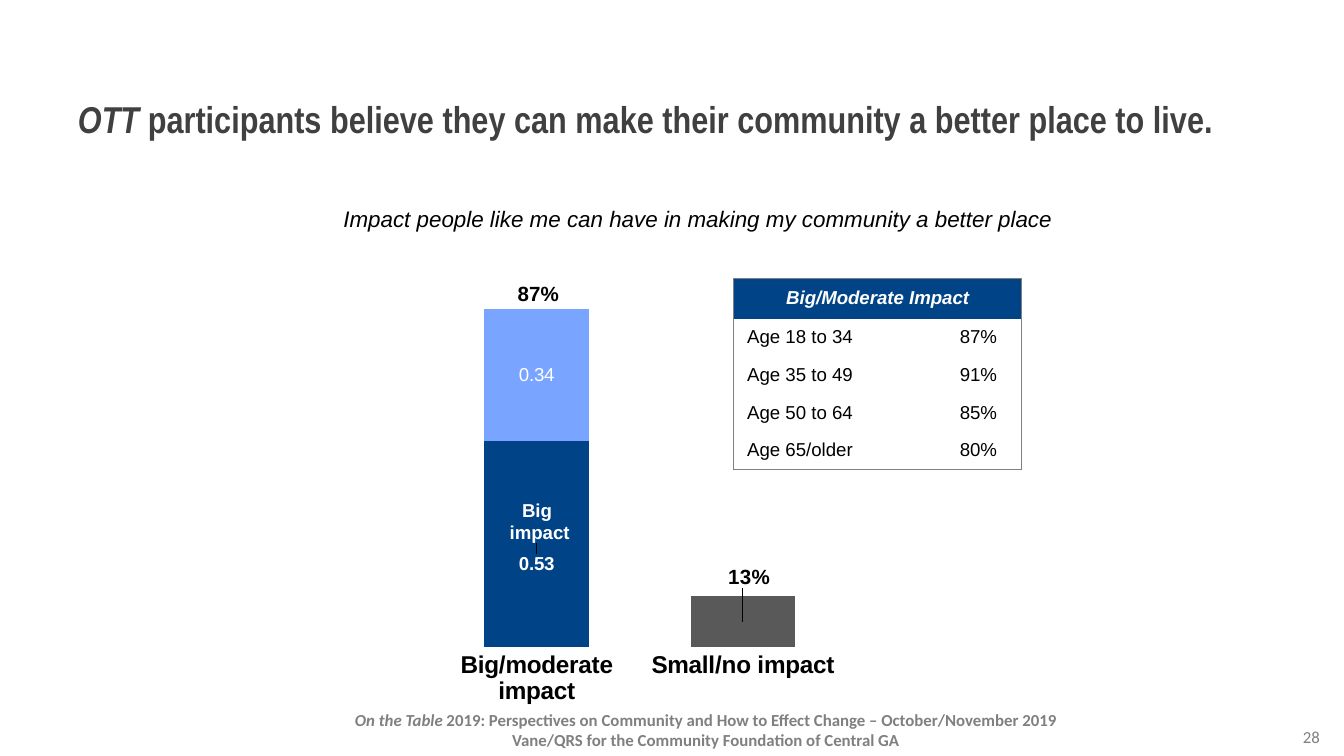
from lxml import etree
from pptx import Presentation
from pptx.chart.data import CategoryChartData
from pptx.dml.color import RGBColor
from pptx.enum.chart import XL_CHART_TYPE, XL_TICK_LABEL_POSITION, XL_TICK_MARK
from pptx.enum.text import MSO_ANCHOR, PP_ALIGN
from pptx.oxml import parse_xml
from pptx.oxml.ns import nsdecls, qn
from pptx.util import Inches, Pt

BLACK = RGBColor(0, 0, 0)
WHITE = RGBColor(255, 255, 255)
NAVY = RGBColor(0x00, 0x43, 0x86)
SKY = RGBColor(0x79, 0xA4, 0xFF)
CHARCOAL = RGBColor(0x59, 0x59, 0x59)
TITLE_GRAY = RGBColor(0x40, 0x40, 0x40)
GRAY = RGBColor(0x80, 0x80, 0x80)

LEFT, CENTER, RIGHT = PP_ALIGN.LEFT, PP_ALIGN.CENTER, PP_ALIGN.RIGHT
JUSTIFY = PP_ALIGN.JUSTIFY
MIDDLE = MSO_ANCHOR.MIDDLE
STACKED = XL_CHART_TYPE.COLUMN_STACKED
NO_TICK = XL_TICK_MARK.NONE
NEXT_TO_AXIS = XL_TICK_LABEL_POSITION.NEXT_TO_AXIS

PLAIN_TABLE = "{2D5ABB26-0587-4C30-8999-92F81FD0307C}"
NO_LEADERS = (
    f'<c:extLst {nsdecls("c")}><c:ext uri="{{CE6537A1-D6FC-4f65-9D91-7224C49458BB}}" '
    'xmlns:c15="http://schemas.microsoft.com/office/drawing/2012/chart">'
    '<c15:showLeaderLines val="0"/></c:ext></c:extLst>')

CATEGORIES = ["Big/moderate impact", "Small/no impact", ""]
SERIES = [
    ("Series 1", [0.53, None, None], NAVY, "General",
     {"size": Pt(10), "bold": True}, WHITE),
    ("Series 2", [0.34, None, None], SKY, "General",
     {"size": Pt(10), "bold": False}, WHITE),
    ("Series 3", [None, 0.13, None], CHARCOAL, "0%",
     {"size": Pt(11), "bold": True}, BLACK),
]
LABEL_SHIFTS = [(0, 0, 0, 0.04), (2, 1, 0.01, -0.09)]
AGE_ROWS = [("Age 18 to 34", "87%"), ("Age 35 to 49", "91%"),
            ("Age 50 to 64", "85%"), ("Age 65/older", "80%")]


def style_font(font, color, **values):
    """Set a font's colour and its other format values."""
    font.color.rgb = color
    for key, value in values.items():
        setattr(font, key, value)


def write(paragraph, runs, align, color, **values):
    """Fill a paragraph with (text, italic) runs of one format."""
    paragraph.alignment = align
    for text, italic in runs:
        for index, line in enumerate(text.split("\n")):
            if index:
                paragraph.add_line_break()
            run = paragraph.add_run()
            run.text = line
            style_font(run.font, color, italic=italic, **values)


def add_text(slide, box, lines, align, color, wrap=True, **values):
    """Add a text box with one paragraph per line and return its frame."""
    frame = slide.shapes.add_textbox(*map(Inches, box)).text_frame
    frame.word_wrap = wrap
    for index, runs in enumerate(lines):
        paragraph = frame.add_paragraph() if index else frame.paragraphs[0]
        write(paragraph, runs, align, color, **values)
    return frame


def set_title(slide, runs):
    """Move and format the title placeholder."""
    title = slide.shapes.title
    title.left, title.top, title.width, title.height = map(
        Inches, (0.48, 0.41, 8.88, 0.94))
    title.text_frame.vertical_anchor = MIDDLE
    write(title.text_frame.paragraphs[0], runs, JUSTIFY, TITLE_GRAY,
          name="Arial Narrow", size=Pt(20), bold=True)


def manual_layout(**values):
    """Build a manual chart layout element."""
    parts = "".join(f'<c:{key} val="{value}"/>' for key, value in values.items())
    return parse_xml(f'<c:layout {nsdecls("c")}><c:manualLayout>{parts}'
                     '</c:manualLayout></c:layout>')


def shift_label(series, point, x, y, number_format, color, values):
    """Move one data label by shares of the chart's size."""
    style_font(series.points[point].data_label.font, color, **values)
    label = series._element.find(f".//{qn('c:dLbl')}")
    layout = manual_layout(x=x, y=y)
    label.find(qn("c:idx")).addnext(layout)
    layout.addnext(parse_xml(f'<c:numFmt {nsdecls("c")} '
                             f'formatCode="{number_format}" sourceLinked="0"/>'))
    label.getparent().append(parse_xml(NO_LEADERS))


def add_impact_chart(slide):
    """Add the stacked columns of big, moderate and small impact."""
    data = CategoryChartData()
    data.categories = CATEGORIES
    for name, shares, *_ in SERIES:
        data.add_series(name, shares)
    chart = slide.shapes.add_chart(
        STACKED, *map(Inches, (3.14, 1.67, 4.77, 3.7)), data).chart
    chart.has_legend = chart.has_title = False
    style_font(chart.font, BLACK, name="Arial", size=Pt(18))

    plot = chart.plots[0]
    plot.gap_width, plot.overlap, plot.vary_by_categories = 97, 100, False
    for series, (_, _, fill, number_format, values, color) in zip(plot.series, SERIES):
        series.format.fill.solid()
        series.format.fill.fore_color.rgb = fill
        labels = series.data_labels
        labels.show_value = True
        labels.number_format = number_format
        labels.number_format_is_linked = False
        style_font(labels.font, color, name="Arial", **values)
    for index, point, x, y in LABEL_SHIFTS:
        _, _, _, number_format, values, color = SERIES[index]
        shift_label(plot.series[index], point, x, y, number_format, color, values)

    shares = chart.value_axis
    shares.minimum_scale, shares.maximum_scale = 0, 1
    shares.has_major_gridlines = shares.visible = False
    impacts = chart.category_axis
    impacts.major_tick_mark = impacts.minor_tick_mark = NO_TICK
    impacts.tick_label_position = NEXT_TO_AXIS
    impacts.tick_labels.offset = 0
    impacts.format.line.fill.background()
    style_font(impacts.tick_labels.font, BLACK, size=Pt(13), bold=True)

    area = chart._chartSpace.find(f".//{qn('c:plotArea')}")
    for layout in area.findall(qn("c:layout")):
        area.remove(layout)
    area.insert(0, manual_layout(layoutTarget="inner", xMode="edge", yMode="edge",
                                 x=0.018, y=0.068, w=0.965, h=0.782))


def border_cell(cell, sides):
    """Draw thin gray lines on the given sides of a cell."""
    properties = cell._tc.get_or_add_tcPr()
    for index, side in enumerate(sides):
        line = etree.Element(qn(f"a:ln{side}"), w=str(Pt(0.5)))
        fill = etree.SubElement(line, qn("a:solidFill"))
        etree.SubElement(fill, qn("a:srgbClr"), val=str(GRAY))
        properties.insert(index, line)


def fill_cell(cell, text, align, color, sides, italic=False, **values):
    """Write one table cell and draw its borders."""
    cell.vertical_anchor = MIDDLE
    cell.margin_top = cell.margin_bottom = Inches(0.03)
    write(cell.text_frame.paragraphs[0], [(text, italic)],
          align, color, name="Arial", size=Pt(10), **values)
    border_cell(cell, sides)


def add_age_table(slide):
    """Add the table of big or moderate impact by age."""
    last = len(AGE_ROWS)
    table = slide.shapes.add_table(
        last + 1, 2, *map(Inches, (5.46, 2.07, 2.14, 1.42))).table
    table.first_row = table.horz_banding = False
    table._tbl.tblPr.find(qn("a:tableStyleId")).text = PLAIN_TABLE
    for column, width in zip(table.columns, (1.5, 0.64)):
        column.width = Inches(width)
    for index, row in enumerate(table.rows):
        row.height = Inches(0.28 if index else 0.3)

    header = table.cell(0, 0)
    header.merge(table.cell(0, 1))
    header.fill.solid()
    header.fill.fore_color.rgb = NAVY
    fill_cell(header, "Big/Moderate Impact", CENTER, WHITE, "LRT",
              bold=True, italic=True)
    for index, texts in enumerate(AGE_ROWS, 1):
        for column, (text, align, side) in enumerate(
                zip(texts, (LEFT, CENTER), "LR")):
            cell = table.cell(index, column)
            cell.fill.background()
            fill_cell(cell, text, align, BLACK,
                      side + "B" * (index == last), bold=False)


def main():
    """Build the slide and save it."""
    deck = Presentation()
    deck.slide_width = Inches(10)
    deck.slide_height = deck.slide_width * 9 // 16
    slide = deck.slides.add_slide(deck.slide_layouts[5])
    footer = {"name": "Calibri", "size": Pt(9)}
    add_text(slide, (2.47, 5.23, 5.56, 0.4), [
        [("On the Table", True),
         (" 2019: Perspectives on Community and How to Effect Change"
          " – October/November 2019", False)],
        [("Vane/QRS for the Community Foundation of Central GA", False)],
    ], CENTER, GRAY, wrap=False, bold=True, **footer)
    set_title(slide, [("OTT", True), (" participants believe they can make their "
                                      "community a better place to live.", False)])
    add_impact_chart(slide)
    add_text(slide, (9.28, 5.36, 0.64, 0.25), [[("28", False)]], RIGHT, GRAY, **footer)
    add_text(slide, (3.75, 2.04, 0.51, 0.29), [[("87%", False)]], CENTER, BLACK,
             wrap=False, name="Arial", size=Pt(11), bold=True)
    question = add_text(
        slide, (1.82, 1.48, 6.75, 0.3),
        [[("Impact people like me can have in making my community a better place",
           True)]], CENTER, BLACK, name="Arial", size=Pt(12))
    question.paragraphs[0].line_spacing = Pt(14)
    add_text(slide, (3.44, 3.66, 1.15, 0.44), [[("Big \nimpact", False)]], CENTER,
             WHITE, name="Arial", size=Pt(10), bold=True)
    add_age_table(slide)
    deck.save("out.pptx")


if __name__ == "__main__":
    main()
